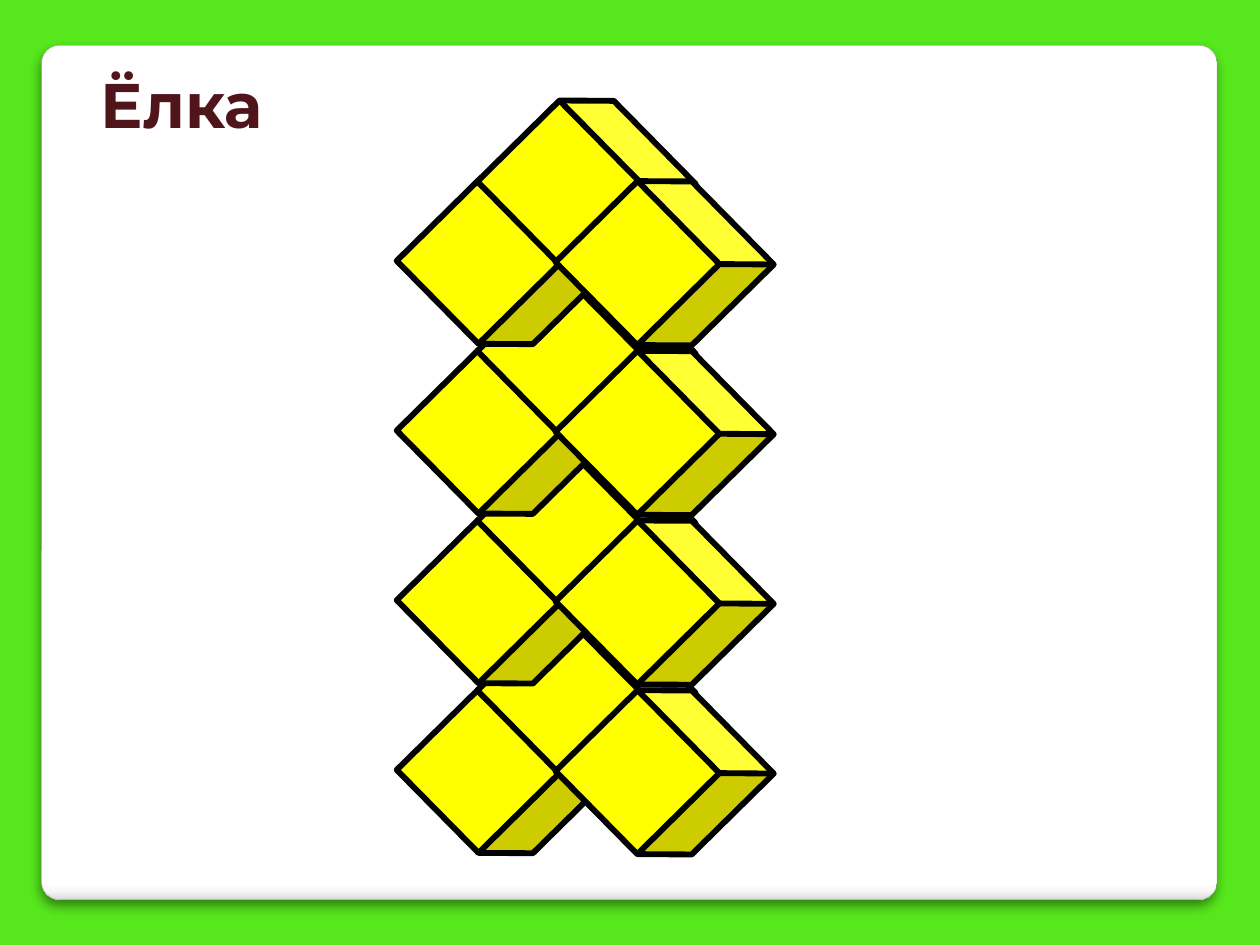
from lxml import etree
from pptx import Presentation
from pptx.dml.color import RGBColor
from pptx.enum import shapes, text
from pptx.oxml import ns
from pptx.util import Inches, Pt

# Content
TITLE = "Ёлка"
TIERS = 4
TIER_CUBES = [(3.4, 0.63), (4.04, 0), (4.66, 0.64)]  # left, drop below the tier's top
TOP_TIER, BOTTOM_TIER = 0.84, 4.88
CUBE_SIZE = (1.23, 1.22)
CUBE_TURN = 45.4
PANEL_BOX = (0.33, 0.36, 9.33, 6.78)
TITLE_BOX = (0.7, 0.47, 1.58, 0.71)

THEME = {
    "background": "57E71D",
    "panel_stops": [(0, "FFFFFF"), (98, "FFFFFF"), (99, "F7F7F7"), (100, "DADADA")],
    "panel_line": ("A4A4A4", 0.16),
    "panel_shadow": {"color": "000000", "alpha": 44, "blur": 6, "distance": 4},
    "cube": "FFFF00",
    "cube_line": ("000000", 3.35),
    "title": {"name": "Montserrat", "size": Pt(36), "bold": True},
    "title_color": "50141B",
}


def paint(fill, color):
    fill.solid()
    fill.fore_color.rgb = RGBColor.from_string(color)


def outline(shape, color, width):
    paint(shape.line.fill, color)
    shape.line.width = Pt(width)


def child(parent, tag, **attributes):
    values = {key: str(value) for key, value in attributes.items()}
    return etree.SubElement(parent, ns.qn(tag), values)


def shade_panel(panel):
    """Vertical gradient with a dark lower edge, and a soft shadow below."""
    panel.fill.gradient()
    panel.fill.gradient_angle = 270
    stops = panel._element.spPr.find(".//" + ns.qn("a:gsLst"))
    for stop in list(stops):
        stops.remove(stop)
    for percent, color in THEME["panel_stops"]:
        stop = child(stops, "a:gs", pos=percent * 1000)
        child(stop, "a:srgbClr", val=color)

    panel.shadow.inherit = False
    shadow = THEME["panel_shadow"]
    effects = panel._element.spPr.find(ns.qn("a:effectLst"))
    outer = child(effects, "a:outerShdw", blurRad=Pt(shadow["blur"]),
                  dist=Pt(shadow["distance"]), dir=90 * 60000, algn="t", rotWithShape=0)
    tint = child(outer, "a:srgbClr", val=shadow["color"])
    child(tint, "a:alpha", val=shadow["alpha"] * 1000)


def add_panel(slide):
    panel = slide.shapes.add_shape(shapes.MSO_SHAPE.ROUNDED_RECTANGLE, *map(Inches, PANEL_BOX))
    panel.adjustments[0] = 0.021
    outline(panel, *THEME["panel_line"])
    shade_panel(panel)


def add_tier(slide, top):
    tier = slide.shapes.add_group_shape()
    for left, drop in TIER_CUBES:
        box = (left, top + drop, *CUBE_SIZE)
        cube = tier.shapes.add_shape(shapes.MSO_SHAPE.CUBE, *map(Inches, box))
        cube.rotation = CUBE_TURN
        cube.shadow.inherit = False
        paint(cube.fill, THEME["cube"])
        outline(cube, *THEME["cube_line"])


def set_title(slide):
    title = slide.shapes.title
    title.left, title.top, title.width, title.height = map(Inches, TITLE_BOX)
    frame = title.text_frame
    frame.text = TITLE
    layout = {
        "word_wrap": False,
        "auto_size": text.MSO_AUTO_SIZE.SHAPE_TO_FIT_TEXT,
        "vertical_anchor": text.MSO_ANCHOR.TOP,
    }
    for name, value in layout.items():
        setattr(frame, name, value)
    heading = frame.paragraphs[0]
    heading.alignment = text.PP_ALIGN.LEFT
    font = heading.runs[0].font
    for name, value in THEME["title"].items():
        setattr(font, name, value)
    font.color.rgb = RGBColor.from_string(THEME["title_color"])
    # Bring the title in front of the panel
    title._element.getparent().append(title._element)


def main():
    deck = Presentation()
    deck.slide_width, deck.slide_height = Inches(10), Inches(7.5)
    slide = deck.slides.add_slide(deck.slide_layouts.get_by_name("Title Only"))
    paint(slide.background.fill, THEME["background"])

    add_panel(slide)

    # Tree: upper tiers overlap the ones below, so build from the bottom
    step = (BOTTOM_TIER - TOP_TIER) / (TIERS - 1)
    for level in range(TIERS):
        add_tier(slide, BOTTOM_TIER - level * step)

    set_title(slide)
    deck.save("out.pptx")


if __name__ == "__main__":
    main()
